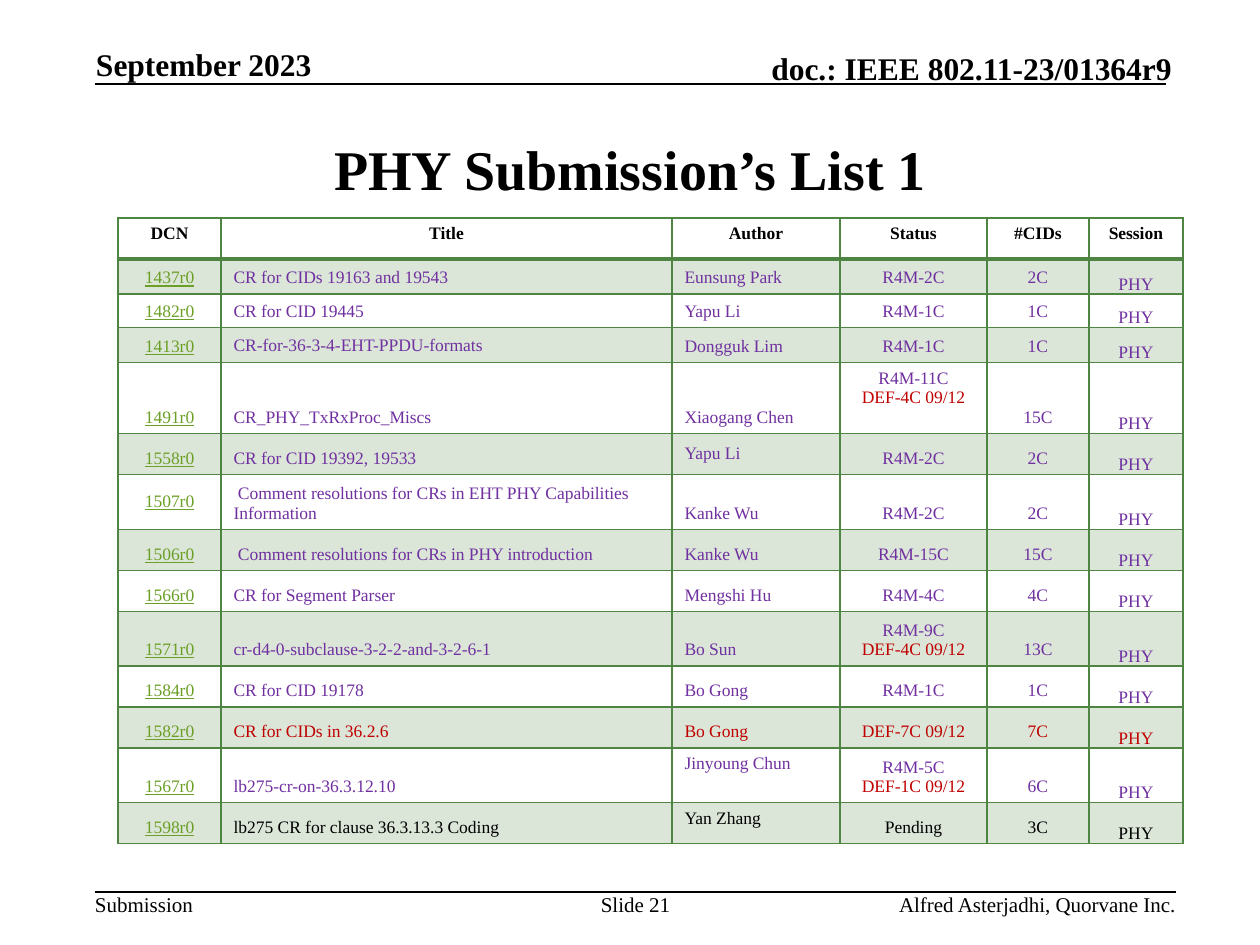
from dataclasses import dataclass

from lxml.etree import SubElement
from pptx import Presentation
from pptx.dml.color import RGBColor
from pptx.enum.shapes import MSO_CONNECTOR
from pptx.enum.text import MSO_ANCHOR as ANCHOR, PP_ALIGN as ALIGN
from pptx.oxml.ns import qn
from pptx.util import Emu, Pt


@dataclass(frozen=True)
class Theme:
    font: str = "Times New Roman"
    black: str = "000000"
    green: str = "4E8542"
    link: str = "6B9F25"
    ready: str = "7030A0"
    deferred: str = "C00000"
    band_alpha: int = 20
    title: int = 32
    header: int = 18
    footer: int = 12
    body: int = 10


THEME = Theme()
TOP, MIDDLE, BOTTOM = ANCHOR.TOP, ANCHOR.MIDDLE, ANCHOR.BOTTOM
LEFT, CENTER, RIGHT = ALIGN.LEFT, ALIGN.CENTER, ALIGN.RIGHT

HEADINGS = ["DCN", "Title", "Author", "Status", "#CIDs", "Session"]
COLUMN_WIDTHS = [103, 451, 168, 147, 102, 94]
COLUMN_ALIGN = [CENTER, LEFT, LEFT, CENTER, CENTER, CENTER]
HEADER_HEIGHT = 41
SUBMISSIONS = [
    (35, THEME.ready, "1437r0", "CR for CIDs 19163 and 19543", "Eunsung Park", "R4M-2C", "2C"),
    (32, THEME.ready, "1482r0", "CR for CID 19445", "Yapu Li", "R4M-1C", "1C"),
    (35, THEME.ready, "1413r0", "CR-for-36-3-4-EHT-PPDU-formats", "Dongguk Lim", "R4M-1C", "1C"),
    (71, THEME.ready, "1491r0", "CR_PHY_TxRxProc_Miscs", "Xiaogang Chen", "R4M-11C\nDEF-4C 09/12", "15C"),
    (41, THEME.ready, "1558r0", "CR for CID 19392, 19533", "Yapu Li", "R4M-2C", "2C"),
    (51, THEME.ready, "1507r0", " Comment resolutions for CRs in EHT PHY Capabilities Information",
     "Kanke Wu", "R4M-2C", "2C"),
    (41, THEME.ready, "1506r0", " Comment resolutions for CRs in PHY introduction",
     "Kanke Wu", "R4M-15C", "15C"),
    (41, THEME.ready, "1566r0", "CR for Segment Parser", "Mengshi Hu", "R4M-4C", "4C"),
    (51, THEME.ready, "1571r0", "cr-d4-0-subclause-3-2-2-and-3-2-6-1", "Bo Sun", "R4M-9C\nDEF-4C 09/12", "13C"),
    (41, THEME.ready, "1584r0", "CR for CID 19178", "Bo Gong", "R4M-1C", "1C"),
    (41, THEME.deferred, "1582r0", "CR for CIDs in 36.2.6", "Bo Gong", "DEF-7C 09/12", "7C"),
    (51, THEME.ready, "1567r0", "lb275-cr-on-36.3.12.10", "Jinyoung Chun", "R4M-5C\nDEF-1C 09/12", "6C"),
    (41, THEME.black, "1598r0", "lb275 CR for clause 36.3.13.3 Coding", "Yan Zhang", "Pending", "3C"),
]
CELL_ANCHORS = {
    ("1413r0", "Title"): MIDDLE,
    ("1491r0", "Status"): TOP,
    ("1558r0", "Author"): MIDDLE,
    ("1507r0", "DCN"): MIDDLE,
    ("1567r0", "Author"): TOP,
    ("1598r0", "Author"): TOP,
}


def px(n):
    return Emu(round(n * 914400 / 126))


def format_paragraph(p, size, color, align, bold=False, underline=False):
    p.alignment = align
    for r in p.runs:
        r.font.name = THEME.font
        r.font.size = Pt(size)
        r.font.bold = bold
        r.font.underline = underline
        r.font.color.rgb = RGBColor.from_string(color)


def add_text(slide, box, text, size, align=LEFT, anchor=TOP, bold=False):
    tf = slide.shapes.add_textbox(*map(px, box)).text_frame
    tf.margin_left = tf.margin_right = tf.margin_top = tf.margin_bottom = 0
    tf.word_wrap = True
    tf.vertical_anchor = anchor
    tf.text = text
    format_paragraph(tf.paragraphs[0], size, THEME.black, align, bold)


def add_rule(slide, x, y, width):
    line = slide.shapes.add_connector(MSO_CONNECTOR.STRAIGHT, px(x), px(y), px(x + width), px(y))
    line.line.color.rgb = RGBColor.from_string(THEME.black)
    line.line.width = Pt(1)
    SubElement(line._element.spPr, qn("a:effectLst"))


def add_header(slide, x, y, width, height):
    add_rule(slide, x, y + height, width)
    add_text(slide, (x + 1, y, 258, height - 1), "September 2023",
             THEME.header, anchor=BOTTOM, bold=True)
    add_text(slide, (x + width - 477, y + 3, 483, height), "doc.: IEEE 802.11-23/01364r9",
             THEME.header, RIGHT, BOTTOM, True)


def add_footer(slide, x, y, width, height):
    add_rule(slide, x, y, width)
    add_text(slide, (x, y, 110, height), "Submission", THEME.footer)
    add_text(slide, (x + 504, y, 73, height), "Slide 21", THEME.footer, CENTER)
    add_text(slide, (x + width - 438, y, 438, height), "Alfred Asterjadhi, Quorvane Inc.",
             THEME.footer, RIGHT)


def set_title(slide, x, y, width, height):
    title = slide.shapes.title
    title.left, title.top, title.width, title.height = map(px, (x, y, width, height))
    tf = title.text_frame
    tf.vertical_anchor = MIDDLE
    tf.text = "PHY Submission’s List 1"
    format_paragraph(tf.paragraphs[0], THEME.title, THEME.black, CENTER, True)


def style_cell(cell, is_header, banded):
    tc_pr = cell._tc.get_or_add_tcPr()
    for side in ("lnL", "lnR", "lnT", "lnB"):
        width = 2 if is_header and side == "lnB" else 1
        line = SubElement(tc_pr, qn(f"a:{side}"), w=str(Pt(width)))
        fill = SubElement(line, qn("a:solidFill"))
        SubElement(fill, qn("a:srgbClr"), val=THEME.green)
    if banded:
        cell.fill.solid()
        cell.fill.fore_color.rgb = RGBColor.from_string(THEME.green)
        color = tc_pr.find(qn("a:solidFill")).find(qn("a:srgbClr"))
        SubElement(color, qn("a:alpha"), val=str(THEME.band_alpha * 1000))
    else:
        cell.fill.background()


def fill_submission(cell, heading, text, color, align, anchor):
    cell.vertical_anchor = anchor
    if heading == "Session":
        cell.margin_left = cell.margin_right = cell.margin_top = cell.margin_bottom = 0
    cell.text_frame.text = text
    is_link = heading == "DCN"
    for p in cell.text_frame.paragraphs:
        shade = THEME.deferred if p.text.startswith("DEF") else color
        format_paragraph(p, THEME.body, THEME.link if is_link else shade, align, underline=is_link)


def add_submissions(slide, x, y):
    heights = [HEADER_HEIGHT] + [entry[0] for entry in SUBMISSIONS]
    table = slide.shapes.add_table(len(heights), len(HEADINGS), px(x), px(y),
                                   px(sum(COLUMN_WIDTHS)), px(sum(heights))).table
    table.first_row = table.horz_banding = False
    for column, width in zip(table.columns, COLUMN_WIDTHS):
        column.width = px(width)
    for row, height in zip(table.rows, heights):
        row.height = px(height)
    for c, heading in enumerate(HEADINGS):
        cell = table.cell(0, c)
        style_cell(cell, True, False)
        cell.text_frame.text = heading
        format_paragraph(cell.text_frame.paragraphs[0], THEME.body, THEME.black, CENTER, True)
    for i, (_, color, *texts) in enumerate(SUBMISSIONS, 1):
        for c, (heading, text) in enumerate(zip(HEADINGS, texts + ["PHY"])):
            cell = table.cell(i, c)
            style_cell(cell, False, i % 2 == 1)
            anchor = CELL_ANCHORS.get((texts[0], heading), BOTTOM)
            fill_submission(cell, heading, text, color, COLUMN_ALIGN[c], anchor)


def main():
    prs = Presentation()
    prs.slide_width, prs.slide_height = px(1260), px(945)
    slide = prs.slides.add_slide(prs.slide_layouts[5])
    add_header(slide, 95, 46, 1071, 38)
    set_title(slide, 95, 95, 1071, 146)
    add_submissions(slide, 118, 218)
    add_footer(slide, 95, 892, 1081, 26)
    prs.save("out.pptx")


if __name__ == "__main__":
    main()
